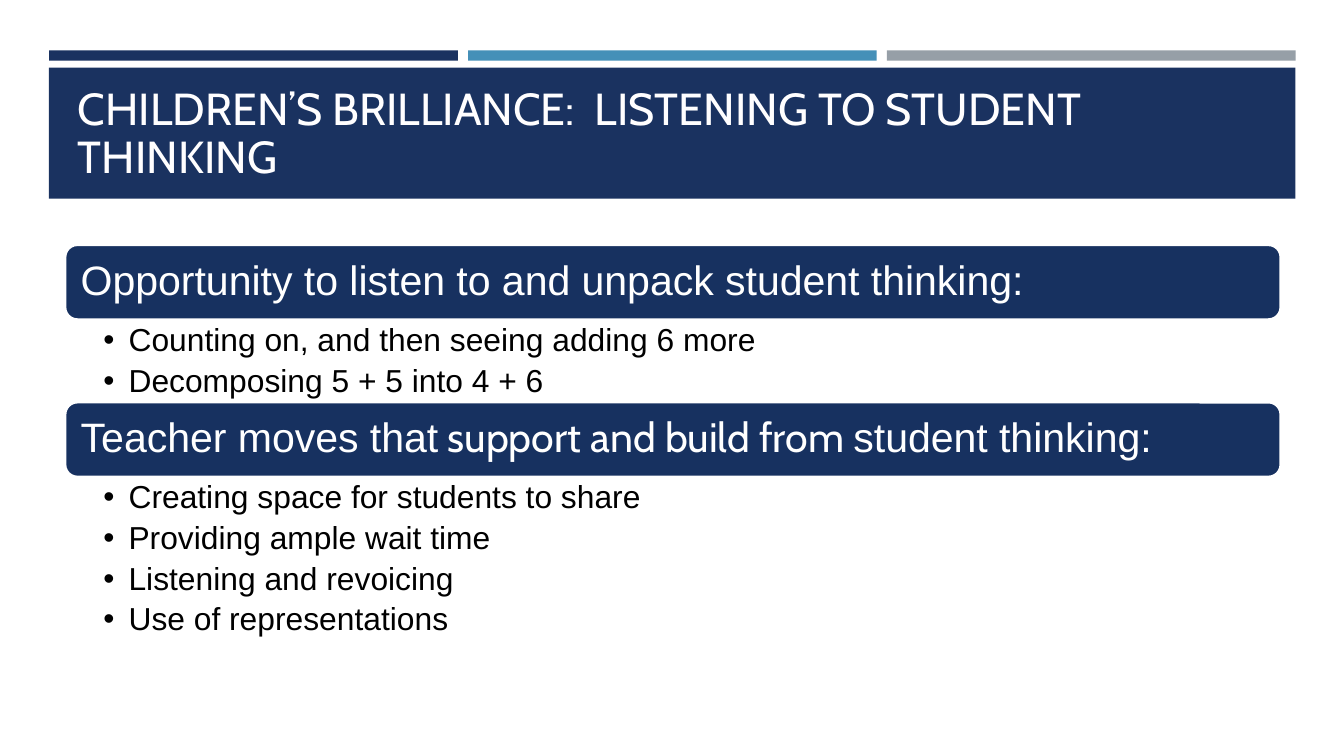
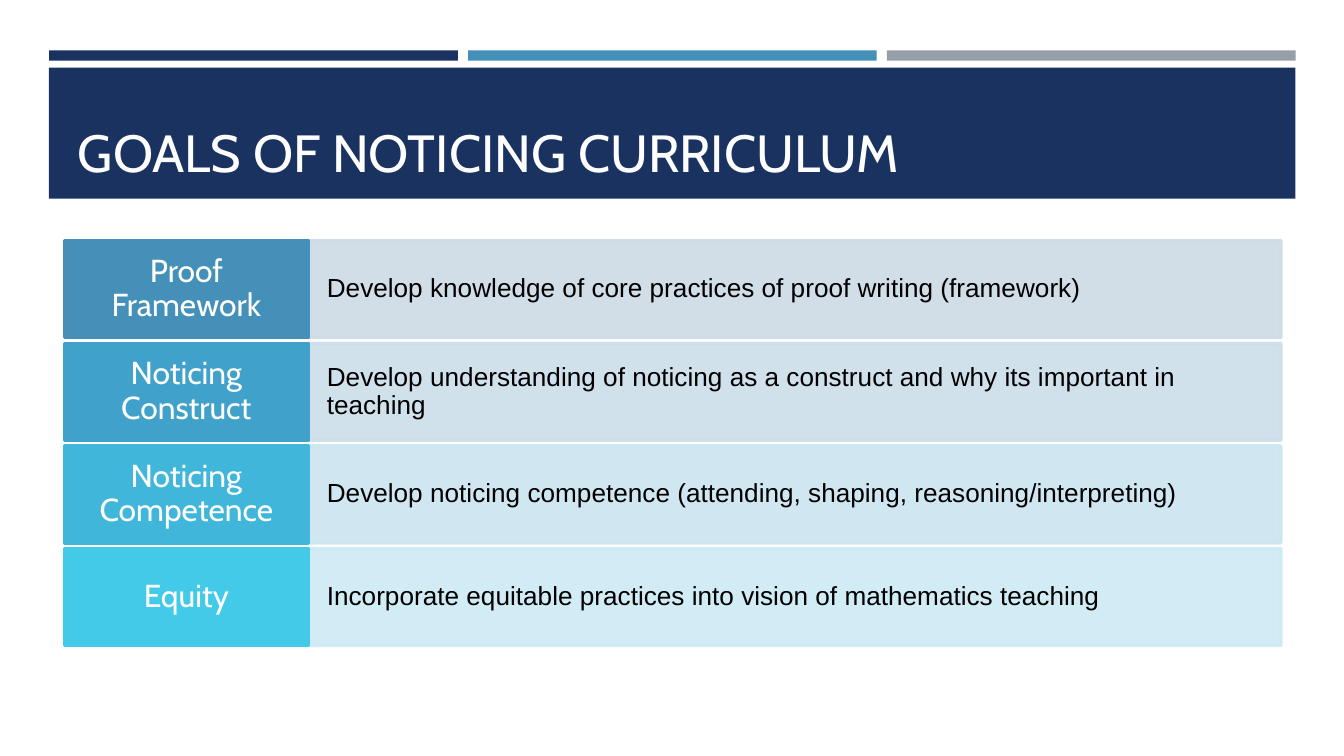
from dataclasses import dataclass

from lxml.etree import SubElement
from pptx import Presentation
from pptx.dml.color import RGBColor
from pptx.enum.shapes import MSO_SHAPE
from pptx.enum.text import MSO_ANCHOR, PP_ALIGN
from pptx.oxml.ns import qn
from pptx.util import Pt


@dataclass(frozen=True)
class Theme:
    navy: str = "1A3260"
    blue: str = "4590B8"
    grey: str = "969FA7"
    heading_fill: str = "173160"
    title_color: str = "FFFEFF"
    white: str = "FFFFFF"
    black: str = "000000"
    display: str = "Cabin"
    body: str = "Arial"
    title_size: float = 28
    long_title_size: float = 24
    heading_size: float = 22
    label_size: float = 17
    detail_size: float = 14
    outline: float = 1.75
    left: float = 34.7
    width: float = 651.6


class Deck:
    def __init__(self, theme):
        self.theme = theme
        self.presentation = Presentation()
        self.presentation.slide_width = Pt(720)
        self.presentation.slide_height = Pt(405)
        self.slide = None

    def start_slide(self, title, size, spacing=1.0):
        theme = self.theme
        self.slide = self.presentation.slides.add_slide(self.presentation.slide_layouts[6])
        for column, color in enumerate((theme.navy, theme.blue, theme.grey)):
            self.box(26.4 + column * 224.4, 27, 218.9, 5.5, color)
        self.box(26.2, 36.2, 667.8, 70.3, theme.navy)
        frame = self.text_area(theme.left, 41.8, theme.width, 59.8, (7.2, 3.6, 7.2, 3.6), MSO_ANCHOR.BOTTOM)
        self.set_text(frame.paragraphs[0], title, theme.display, size, theme.title_color, spacing)

    def box(self, left, top, width, height, color, outline=None, alpha=None, kind=MSO_SHAPE.RECTANGLE):
        shape = self.slide.shapes.add_shape(kind, Pt(left), Pt(top), Pt(width), Pt(height))
        shape.shadow.inherit = False
        shape.fill.solid()
        shape.fill.fore_color.rgb = RGBColor.from_string(color)
        if outline:
            shape.line.color.rgb = RGBColor.from_string(outline)
            shape.line.width = Pt(self.theme.outline)
        else:
            shape.line.fill.background()
        if alpha:
            for tint in list(shape._element.spPr.iter(qn("a:srgbClr"))):
                SubElement(tint, qn("a:alpha"), val=str(alpha * 1000))
        return shape

    def text_area(self, left, top, width, height, insets, anchor=MSO_ANCHOR.TOP):
        area = self.slide.shapes.add_textbox(Pt(left), Pt(top), Pt(width), Pt(height))
        return self.fit(area.text_frame, insets, anchor)

    def fit(self, frame, insets, anchor=MSO_ANCHOR.MIDDLE):
        frame.word_wrap = True
        frame.vertical_anchor = anchor
        frame.margin_left, frame.margin_top, frame.margin_right, frame.margin_bottom = map(Pt, insets)
        return frame

    def set_text(self, paragraph, text, font, size, color, spacing=0.9, align=PP_ALIGN.LEFT):
        paragraph.alignment = align
        paragraph.line_spacing = spacing
        paragraph.font.size = Pt(size)
        paragraph.font.color.rgb = RGBColor.from_string(color)
        if isinstance(text, str):
            paragraph.font.name = font
            paragraph.add_run().text = text
            return
        for words, run_font in text:
            run = paragraph.add_run()
            run.text = words
            run.font.name = run_font

    def heading(self, top, height, text):
        theme = self.theme
        bar = self.box(theme.left, top, theme.width, height, theme.heading_fill, theme.white,
                       kind=MSO_SHAPE.ROUNDED_RECTANGLE)
        frame = self.fit(bar.text_frame, (6.6, 6.6, 6.6, 6.6))
        self.set_text(frame.paragraphs[0], text, theme.body, theme.heading_size, theme.white)

    def bullets(self, top, height, items):
        theme = self.theme
        frame = self.text_area(theme.left, top, theme.width, height, (20.7, 2.2, 12.2, 2.2))
        for index, item in enumerate(items):
            paragraph = frame.add_paragraph() if index else frame.paragraphs[0]
            paragraph.space_before = Pt(3.4 if index else 0)
            paragraph.line_spacing = 0.9
            properties = paragraph._p.get_or_add_pPr()
            properties.set("marL", str(Pt(13.5)))
            properties.set("indent", str(-Pt(13.5)))
            SubElement(properties, qn("a:buFont"), typeface=theme.body)
            SubElement(properties, qn("a:buChar"), char="•")
            self.set_text(paragraph, item, theme.body, theme.label_size, theme.black)

    def goal(self, top, height, label, detail, label_fill, detail_fill):
        theme = self.theme
        label_width = 130.3
        panel = self.box(theme.left + label_width, top, theme.width - label_width, height,
                         detail_fill, detail_fill, alpha=90)
        frame = self.fit(panel.text_frame, (10.1, 13, 10.1, 13))
        self.set_text(frame.paragraphs[0], detail, theme.body, theme.detail_size, theme.black)
        tag = self.box(theme.left, top, label_width, height, label_fill, label_fill)
        frame = self.fit(tag.text_frame, (7.2, 5, 7.2, 5))
        self.set_text(frame.paragraphs[0], label, theme.display, theme.label_size, theme.white,
                      align=PP_ALIGN.CENTER)


def add_brilliance(deck):
    theme = deck.theme
    deck.start_slide("CHILDREN’S BRILLIANCE:  LISTENING TO STUDENT THINKING", theme.long_title_size, 0.9)
    sections = (
        ("Opportunity to listen to and unpack student thinking:",
         ("Counting on, and then seeing adding 6 more", "Decomposing 5 + 5 into 4 + 6")),
        ((("Teacher moves that", theme.body),
          (" support and build from ", theme.display),
          ("student thinking:", theme.body)),
         ("Creating space for students to share", "Providing ample wait time",
          "Listening and revoicing", "Use of representations")),
    )
    top, heading_height, item_height = 131, 40.4, 21.95
    for heading, items in sections:
        deck.heading(top, heading_height, heading)
        top += heading_height
        deck.bullets(top, item_height * len(items), items)
        top += item_height * len(items)


def add_goals(deck):
    deck.start_slide("GOALS OF NOTICING CURRICULUM", deck.theme.title_size)
    goals = (
        ("Proof Framework", "Develop knowledge of core practices of proof writing (framework)",
         "4490B8", "CDDBE5"),
        ("Noticing Construct",
         "Develop understanding of noticing as a construct and why its important in teaching",
         "40A2CA", "CBDEEB"),
        ("Noticing Competence",
         "Develop noticing competence (attending, shaping, reasoning/interpreting)",
         "40B6DA", "CBE5F1"),
        ("Equity", "Incorporate equitable practices into vision of mathematics teaching",
         "42CAE8", "CCEAF5"),
    )
    for row, goal in enumerate(goals):
        deck.goal(128.9 + row * 55, 52, *goal)


def main():
    deck = Deck(Theme())
    add_brilliance(deck)
    add_goals(deck)
    deck.presentation.save("out.pptx")


if __name__ == "__main__":
    main()
